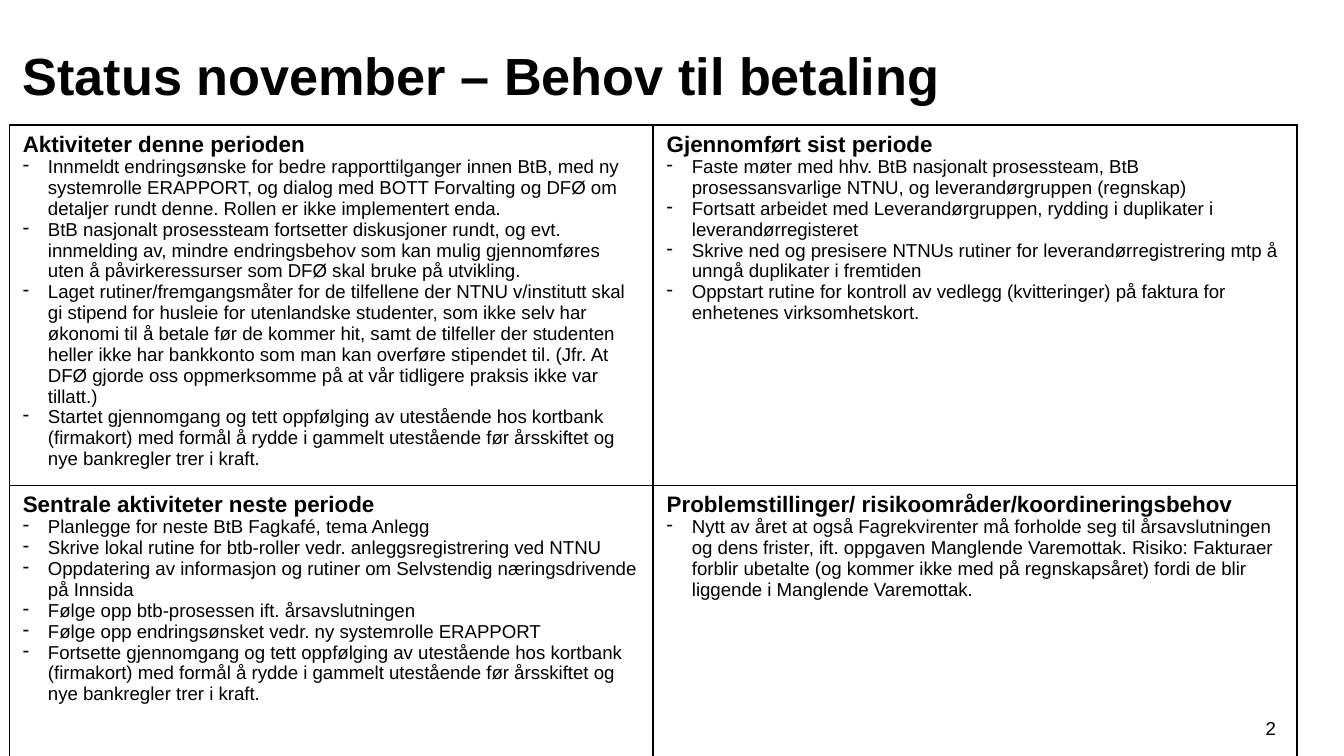
"""Build the November status slide with its four-field table."""
from lxml.etree import SubElement
from pptx import Presentation
from pptx.dml.color import RGBColor
from pptx.enum.text import MSO_ANCHOR, PP_ALIGN
from pptx.oxml.ns import qn
from pptx.util import Pt

TITLE = "Status november – Behov til betaling"
PAGE_NUMBER = "2"
CARD_FOLLOW_UP = (
    "gjennomgang og tett oppfølging av utestående hos kortbank (firmakort) "
    "med formål å rydde i gammelt utestående før årsskiftet og nye bankregler trer i kraft."
)
FIELDS = [
    [
        ("Aktiviteter denne perioden", [
            "Innmeldt endringsønske for bedre rapporttilganger innen BtB, med ny systemrolle "
            "ERAPPORT, og dialog med BOTT Forvalting og DFØ om detaljer rundt denne. "
            "Rollen er ikke implementert enda.",
            "BtB nasjonalt prosessteam fortsetter diskusjoner rundt, og evt. innmelding av, "
            "mindre endringsbehov som kan mulig gjennomføres uten å påvirkeressurser som DFØ "
            "skal bruke på utvikling.",
            "Laget rutiner/fremgangsmåter for de tilfellene der NTNU v/institutt skal gi stipend "
            "for husleie for utenlandske studenter, som ikke selv har økonomi til å betale før de "
            "kommer hit, samt de tilfeller der studenten heller ikke har bankkonto som man kan "
            "overføre stipendet til. (Jfr. At DFØ gjorde oss oppmerksomme på at vår tidligere "
            "praksis ikke var tillatt.)",
            f"Startet {CARD_FOLLOW_UP}",
        ]),
        ("Gjennomført sist periode", [
            "Faste møter med hhv. BtB nasjonalt prosessteam, BtB prosessansvarlige NTNU, "
            "og leverandørgruppen (regnskap)",
            "Fortsatt arbeidet med Leverandørgruppen, rydding i duplikater i leverandørregisteret",
            "Skrive ned og presisere NTNUs rutiner for leverandørregistrering mtp å unngå "
            "duplikater i fremtiden",
            "Oppstart rutine for kontroll av vedlegg (kvitteringer) på faktura for enhetenes "
            "virksomhetskort.",
        ]),
    ],
    [
        ("Sentrale aktiviteter neste periode", [
            "Planlegge for neste BtB Fagkafé, tema Anlegg",
            "Skrive lokal rutine for btb-roller vedr. anleggsregistrering ved NTNU",
            "Oppdatering av informasjon og rutiner om Selvstendig næringsdrivende på Innsida",
            "Følge opp btb-prosessen ift. årsavslutningen",
            "Følge opp endringsønsket vedr. ny systemrolle ERAPPORT",
            f"Fortsette {CARD_FOLLOW_UP}",
        ]),
        ("Problemstillinger/ risikoområder/koordineringsbehov", [
            "Nytt av året at også Fagrekvirenter må forholde seg til årsavslutningen og dens "
            "frister, ift. oppgaven Manglende Varemottak. Risiko: Fakturaer forblir ubetalte "
            "(og kommer ikke med på regnskapsåret) fordi de blir liggende i Manglende Varemottak.",
        ]),
    ],
]

BLACK = RGBColor(0, 0, 0)
WHITE = RGBColor(255, 255, 255)
TITLE_FONT = {"name": "Arial", "size": Pt(28), "bold": True}
HEADING_FONT = {"name": "Arial", "size": Pt(12), "bold": True}
BODY_FONT = {"name": "Arial", "size": Pt(10), "bold": False}
LEFT, TABLE_TOP = Pt(5), Pt(67)
COLUMN_WIDTH = Pt(345)
ROW_HEIGHTS = [Pt(193), Pt(175.5)]
INDENT = Pt(13.5)


def write(para, text, font_format):
    span = para.add_run()
    span.text = text
    for name, value in font_format.items():
        setattr(span.font, name, value)
    span.font.color.rgb = BLACK


def add_dash(para):
    properties = para._p.get_or_add_pPr()
    properties.set("marL", str(INDENT))
    properties.set("indent", str(-INDENT))
    SubElement(properties, qn("a:buFontTx"))
    SubElement(properties, qn("a:buChar"), char="-")


def add_borders(cell):
    properties = cell._tc.get_or_add_tcPr()
    for side in ("lnL", "lnR", "lnT", "lnB"):
        line = SubElement(properties, qn(f"a:{side}"), w=str(Pt(1)))
        fill = SubElement(line, qn("a:solidFill"))
        SubElement(fill, qn("a:srgbClr"), val=str(BLACK))


def fill_cell(cell, heading, points):
    add_borders(cell)
    cell.fill.background()
    frame = cell.text_frame
    write(frame.paragraphs[0], heading, HEADING_FONT)
    for point in points:
        para = frame.add_paragraph()
        add_dash(para)
        write(para, point, BODY_FONT)


def add_title(page):
    title = page.shapes.title
    title.left, title.top, title.width, title.height = LEFT, Pt(9.5), Pt(660), Pt(51)
    title.text_frame.vertical_anchor = MSO_ANCHOR.BOTTOM
    para = title.text_frame.paragraphs[0]
    para.alignment = PP_ALIGN.LEFT
    write(para, TITLE, TITLE_FONT)


def add_status_table(page):
    table = page.shapes.add_table(
        len(FIELDS), len(FIELDS[0]), LEFT, TABLE_TOP,
        COLUMN_WIDTH * len(FIELDS[0]), sum(ROW_HEIGHTS),
    ).table
    table.first_row = table.horz_banding = False
    for column in table.columns:
        column.width = COLUMN_WIDTH
    for row, height, fields in zip(table.rows, ROW_HEIGHTS, FIELDS):
        row.height = height
        for cell, (heading, points) in zip(row.cells, fields):
            fill_cell(cell, heading, points)


def add_page_number(page):
    box = page.shapes.add_textbox(Pt(667.5), Pt(379.5), Pt(26.5), Pt(21.5))
    frame = box.text_frame
    frame.word_wrap = True
    frame.vertical_anchor = MSO_ANCHOR.MIDDLE
    para = frame.paragraphs[0]
    para.alignment = PP_ALIGN.CENTER
    write(para, PAGE_NUMBER, BODY_FONT)


def main():
    deck = Presentation()
    deck.slide_width, deck.slide_height = Pt(720), Pt(405)
    page = deck.slides.add_slide(deck.slide_layouts[5])
    page.background.fill.solid()
    page.background.fill.fore_color.rgb = WHITE
    add_title(page)
    add_status_table(page)
    add_page_number(page)
    deck.save("out.pptx")


if __name__ == "__main__":
    main()
